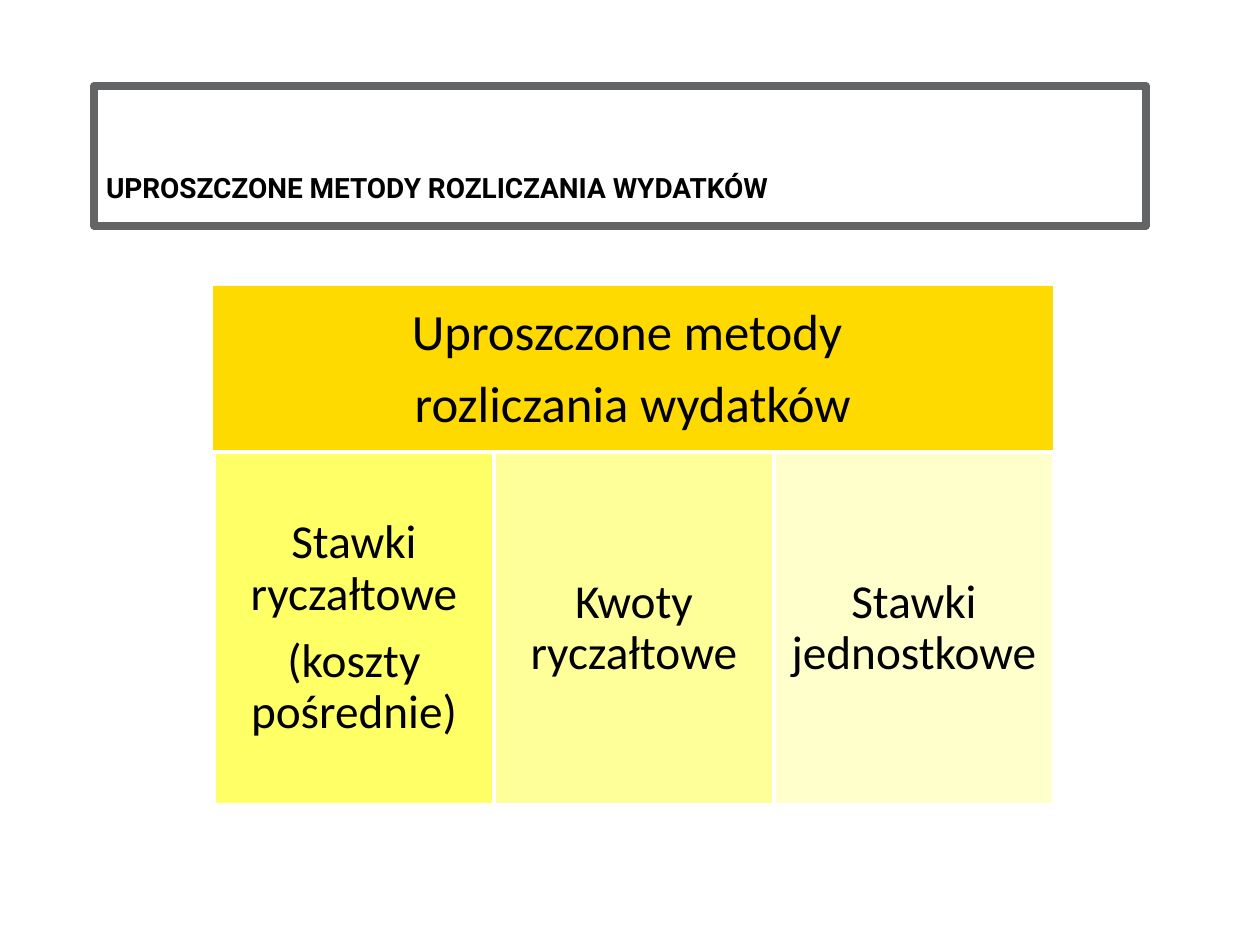
from pptx import Presentation
from pptx.dml.color import RGBColor
from pptx.enum.shapes import MSO_SHAPE as Shape
from pptx.enum.text import MSO_ANCHOR as Anchor, MSO_AUTO_SIZE as AutoSize, PP_ALIGN as Align
from pptx.util import Emu, Pt

EMU_PER_PX = 914400 // 126
TITLE_ONLY = 5


def px(length):
    return Emu(length * EMU_PER_PX)


def color(value):
    return RGBColor.from_string(value)


def set_values(target, values):
    for name, value in values.items():
        setattr(target, name, value)


class SlideBuilder:
    title_font = {"name": "Roboto", "size": Pt(16), "bold": True}
    body_font = {"name": "Calibri", "bold": False}
    text_color = "000000"
    frame_color = "636466"

    def __init__(self, deck):
        self.slide = deck.slides.add_slide(deck.slide_layouts[TITLE_ONLY])

    def add_lines(self, frame, lines, font, paragraph_format):
        for index, line in enumerate(lines):
            para = frame.add_paragraph() if index else frame.paragraphs[0]
            set_values(para, paragraph_format)
            span = para.add_run()
            span.text = line
            set_values(span.font, font)
            span.font.color.rgb = color(self.text_color)

    def add_title(self, text, left, top, width, height):
        box = self.slide.shapes.title
        set_values(box, {"left": px(left), "top": px(top),
                         "width": px(width), "height": px(height)})
        box.line.color.rgb = color(self.frame_color)
        box.line.width = Pt(4.5)
        set_values(box.text_frame, {
            "word_wrap": True, "auto_size": AutoSize.NONE,
            "vertical_anchor": Anchor.BOTTOM,
            "margin_left": px(12), "margin_bottom": px(22)})
        self.add_lines(box.text_frame, [text], self.title_font,
                       {"alignment": Align.LEFT, "space_before": Pt(0)})

    def add_block(self, lines, left, top, width, height, fill, size, margin, border=None):
        box = self.slide.shapes.add_shape(
            Shape.RECTANGLE, px(left), px(top), px(width), px(height))
        box.shadow.inherit = False
        box.fill.solid()
        box.fill.fore_color.rgb = color(fill)
        if border:
            box.line.color.rgb = color(border)
            box.line.width = Pt(2)
        else:
            box.line.fill.background()
        frame = box.text_frame
        set_values(frame, {"word_wrap": True, "vertical_anchor": Anchor.MIDDLE})
        set_values(frame, {f"margin_{side}": px(margin)
                           for side in ("left", "top", "right", "bottom")})
        self.add_lines(frame, lines, {**self.body_font, "size": Pt(size)}, {
            "alignment": Align.CENTER, "line_spacing": 0.9,
            "space_after": Pt(round(size * 0.35, 1))})


def main():
    deck = Presentation()
    set_values(deck, {"slide_width": px(1260), "slide_height": px(945)})
    page = SlideBuilder(deck)
    page.add_title("UPROSZCZONE METODY ROZLICZANIA WYDATKÓW", 94, 86, 1052, 140)
    page.add_block(["Uproszczone metody ", "rozliczania wydatków"],
                   213, 286, 840, 168, "FEDA00", 29, 15)

    methods = [
        (["Stawki ryczałtowe", "(koszty pośrednie)"], "FFFF66"),
        (["Kwoty ryczałtowe"], "FFFF99"),
        (["Stawki jednostkowe"], "FFFFCC"),
    ]
    column_width = 280
    for column, (lines, fill) in enumerate(methods):
        page.add_block(lines, 214 + column * column_width, 452, column_width, 353,
                       fill, 27, 14, border="FFFFFF")
    deck.save("out.pptx")


if __name__ == "__main__":
    main()
